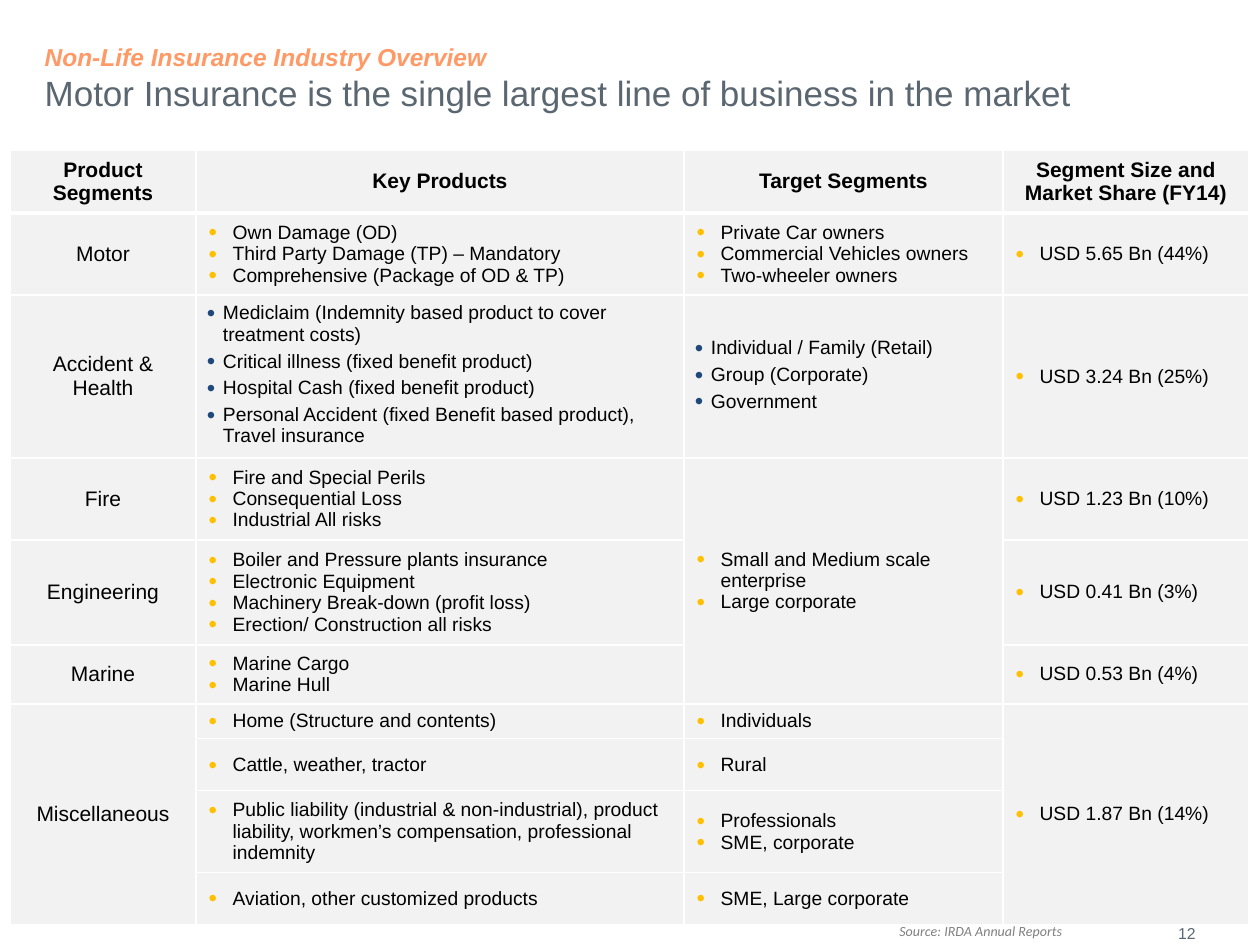
from lxml.etree import SubElement
from pptx import Presentation
from pptx.dml.color import RGBColor
from pptx.enum.text import MSO_ANCHOR, MSO_AUTO_SIZE, PP_ALIGN
from pptx.oxml.ns import qn
from pptx.util import Pt

PX = 914400 // 126
BLACK = RGBColor(0x00, 0x00, 0x00)
WHITE = RGBColor(0xFF, 0xFF, 0xFF)
CELL_GRAY = RGBColor(0xF2, 0xF2, 0xF2)
SLATE = RGBColor(0x5B, 0x67, 0x70)
SOURCE_GRAY = RGBColor(0x80, 0x80, 0x80)
ORANGE = RGBColor(0xFF, 0x99, 0x66)
AMBER = RGBColor(0xFF, 0xC0, 0x00)
NAVY = RGBColor(0x1F, 0x49, 0x7D)

COLUMN_WIDTHS = [186, 488, 319, 246]
ROW_HEIGHTS = [63, 82, 163, 82, 105, 59, 35, 52, 82, 52]
HEADERS = ["Product Segments", "Key Products", "Target Segments",
           "Segment Size and Market Share (FY14)"]
ROWS = [
    ("Motor",
     ["Own Damage (OD)", "Third Party Damage (TP) – Mandatory",
      "Comprehensive (Package of OD & TP)"],
     ["Private Car owners", "Commercial Vehicles owners", "Two-wheeler owners"],
     ["USD 5.65 Bn (44%)"]),
    ("Accident & Health",
     ["Mediclaim (Indemnity based product to cover treatment costs)",
      "Critical illness (fixed benefit product)",
      "Hospital Cash (fixed benefit product)",
      "Personal Accident (fixed Benefit based product), Travel insurance"],
     ["Individual / Family (Retail)", "Group (Corporate)", "Government"],
     ["USD 3.24 Bn (25%)"]),
    ("Fire",
     ["Fire and Special Perils", "Consequential Loss", "Industrial All risks"],
     ["Small and Medium scale enterprise", "Large corporate"],
     ["USD 1.23 Bn (10%)"]),
    ("Engineering",
     ["Boiler and Pressure plants insurance", "Electronic Equipment",
      "Machinery Break-down (profit loss)", "Erection/ Construction all risks"],
     None, ["USD 0.41 Bn (3%)"]),
    ("Marine", ["Marine Cargo", "Marine Hull"], None, ["USD 0.53 Bn (4%)"]),
    ("Miscellaneous", ["Home (Structure and contents)"], ["Individuals"],
     ["USD 1.87 Bn (14%)"]),
    (None, ["Cattle, weather, tractor"], ["Rural"], None),
    (None,
     ["Public liability (industrial & non-industrial), product liability, "
      "workmen’s compensation, professional indemnity"],
     ["Professionals", "SME, corporate"], None),
    (None, ["Aviation, other customized products"], ["SME, Large corporate"], None),
]
MERGES = [(3, 2, 5, 2), (6, 0, 9, 0), (6, 3, 9, 3)]
HEALTH_ROW = 2


def add_run(p, text, size, color, font="Arial", bold=False, italic=False):
    """Append one formatted run to a paragraph."""
    r = p.add_run()
    r.text = text
    r.font.size, r.font.name = Pt(size), font
    r.font.bold, r.font.italic = bold, italic
    r.font.color.rgb = color


def place(shape, left, top, width, height):
    """Position a shape in pixels."""
    shape.left, shape.top = left * PX, top * PX
    shape.width, shape.height = width * PX, height * PX


def set_bullet(p, color, indent):
    """Give a paragraph a hanging, coloured round bullet."""
    pPr = p._p.get_or_add_pPr()
    pPr.set("marL", str(indent * PX))
    pPr.set("indent", str(-indent * PX))
    SubElement(SubElement(pPr, qn("a:buClr")), qn("a:srgbClr"), val=str(color))
    SubElement(pPr, qn("a:buSzPct"), val="125000")
    SubElement(pPr, qn("a:buFont"), typeface="Arial")
    SubElement(pPr, qn("a:buChar"), char="•")


def style_cell(cell, bottom):
    """Apply white borders, gray fill and middle anchoring."""
    tcPr = cell._tc.get_or_add_tcPr()
    for side, width in (("L", 1), ("R", 1), ("T", 1), ("B", bottom)):
        ln = SubElement(tcPr, qn(f"a:ln{side}"), w=str(Pt(width)))
        SubElement(SubElement(ln, qn("a:solidFill")), qn("a:srgbClr"), val=str(WHITE))
    cell.fill.solid()
    cell.fill.fore_color.rgb = CELL_GRAY
    cell.vertical_anchor = MSO_ANCHOR.MIDDLE


def write_label(cell, text, bold=False):
    """Write a centred heading in a cell."""
    p = cell.text_frame.paragraphs[0]
    p.alignment = PP_ALIGN.CENTER
    add_run(p, text, 12, BLACK, bold=bold)


def write_bullets(cell, items, compact=False):
    """Write a bulleted list in a cell."""
    tf = cell.text_frame
    if compact:
        cell.margin_left = cell.margin_right = 11 * PX
        cell.margin_top = 3 * PX
    for i, item in enumerate(items):
        p = tf.add_paragraph() if i else tf.paragraphs[0]
        p.space_before = Pt(3 if compact else 0)
        set_bullet(p, NAVY if compact else AMBER, 16 if compact else 24)
        add_run(p, item, 11, BLACK)


def add_segment_table(s):
    """Add the table of product segments."""
    frame = s.shapes.add_table(len(ROW_HEIGHTS), len(COLUMN_WIDTHS), 10 * PX, 150 * PX,
                               sum(COLUMN_WIDTHS) * PX, sum(ROW_HEIGHTS) * PX)
    table = frame.table
    table.first_row = table.horz_banding = False
    for column, width in zip(table.columns, COLUMN_WIDTHS):
        column.width = width * PX
    for r, height in enumerate(ROW_HEIGHTS):
        table.rows[r].height = height * PX
        for c in range(len(COLUMN_WIDTHS)):
            style_cell(table.cell(r, c), 1 if r else 3)
    for top, left, bottom, right in MERGES:
        table.cell(top, left).merge(table.cell(bottom, right))
    for c, header in enumerate(HEADERS):
        write_label(table.cell(0, c), header, bold=True)
    for r, (label, *lists) in enumerate(ROWS, 1):
        if label:
            write_label(table.cell(r, 0), label)
        for c, items in enumerate(lists, 1):
            if items:
                write_bullets(table.cell(r, c), items, r == HEALTH_ROW and c < 3)


def format_title(s):
    """Fill the title placeholder with a section line and a headline."""
    title = s.shapes.title
    place(title, 32, 10, 1187, 135)
    tf = title.text_frame
    tf.word_wrap, tf.auto_size = True, MSO_AUTO_SIZE.NONE
    tf.vertical_anchor = MSO_ANCHOR.MIDDLE
    p = tf.paragraphs[0]
    p.alignment = PP_ALIGN.LEFT
    add_run(p, "Non-Life Insurance Industry Overview", 14, ORANGE, bold=True, italic=True)
    p.add_line_break()
    add_run(p, "Motor Insurance is the single largest line of business in the market",
            20, SLATE)


def add_text(s, box, text, size, color, align=PP_ALIGN.LEFT, **font):
    """Add a one-line text box centred vertically."""
    tf = s.shapes.add_textbox(*(v * PX for v in box)).text_frame
    tf.word_wrap = True
    tf.margin_top = tf.margin_bottom = 0
    tf.vertical_anchor = MSO_ANCHOR.MIDDLE
    p = tf.paragraphs[0]
    p.alignment = align
    add_run(p, text, size, color, **font)


def main():
    """Build and save the slide."""
    prs = Presentation()
    prs.slide_width, prs.slide_height = 1260 * PX, 945 * PX
    s = prs.slides.add_slide(prs.slide_layouts[5])
    format_title(s)
    add_segment_table(s)
    add_text(s, (925, 925, 283, 16), "12", 9, SLATE, PP_ALIGN.RIGHT)
    add_text(s, (887, 916, 362, 30), "Source: IRDA Annual Reports", 8, SOURCE_GRAY,
             font="Calibri", italic=True)
    prs.save("out.pptx")


if __name__ == "__main__":
    main()
